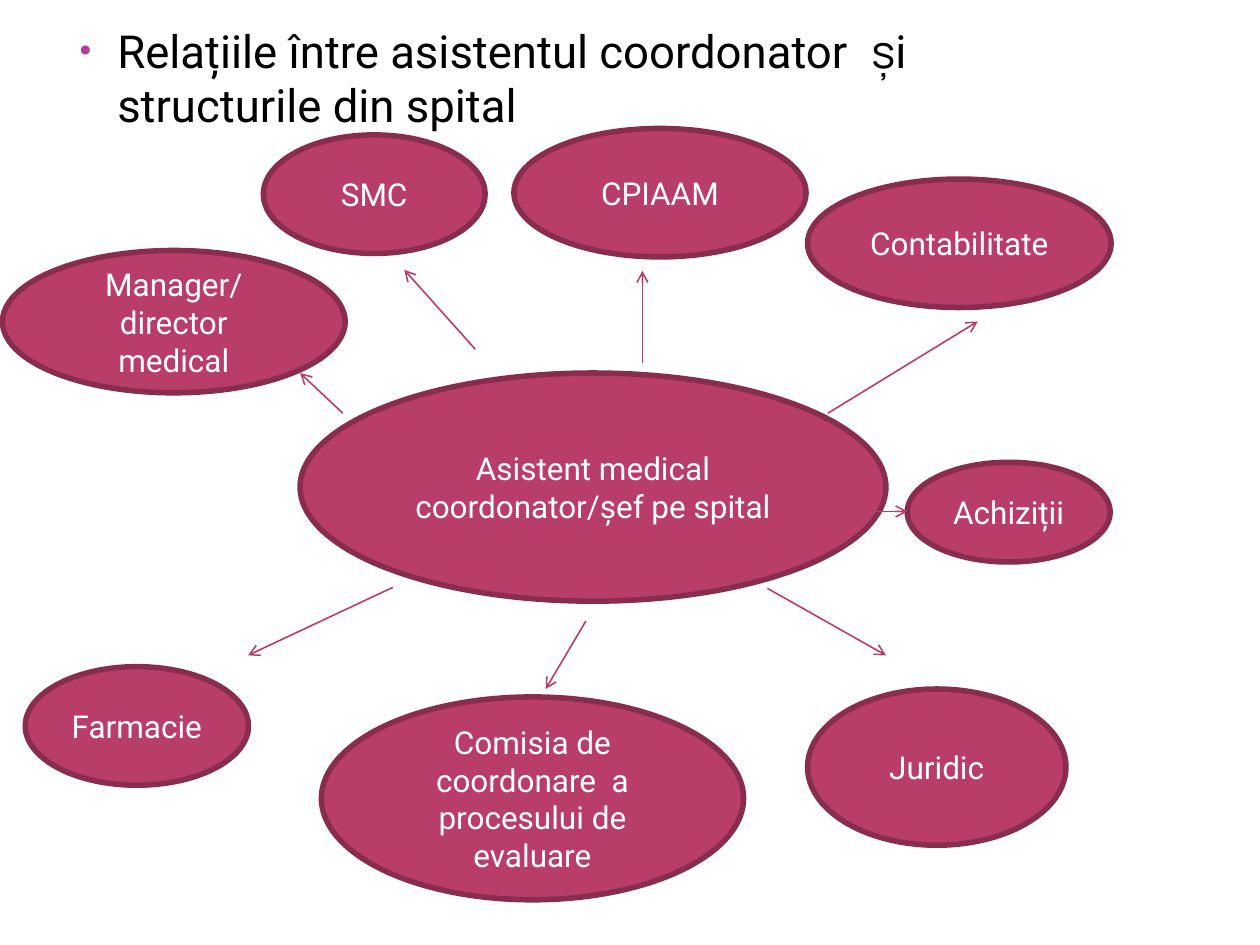
from dataclasses import dataclass

from lxml.etree import SubElement
from pptx import Presentation
from pptx.dml.color import RGBColor
from pptx.enum.shapes import MSO_CONNECTOR, MSO_SHAPE
from pptx.enum.text import MSO_ANCHOR, MSO_AUTO_SIZE, PP_ALIGN
from pptx.oxml.ns import qn
from pptx.util import Cm, Pt


@dataclass(frozen=True)
class Theme:
    fill: str = "B83D68"
    outline: str = "882D4D"
    bullet: str = "B13F9A"
    heading: str = "000000"
    label: str = "FFFFFF"
    font: str = "Roboto"
    accent_font: str = "Manrope"
    heading_size: float = 26
    label_size: float = 18
    outline_width: float = 3.15
    arrow_width: float = 0.9


class SlideBuilder:
    """Holds the theme and the current slide."""

    def __init__(self, slide, theme):
        self.slide = slide
        self.theme = theme

    def add_run(self, paragraph, text, size, color, font):
        run = paragraph.add_run()
        run.text = text
        run.font.size = Pt(size)
        run.font.name = font
        run.font.color.rgb = RGBColor.from_string(color)

    def fill_body(self, left, top, width, height, runs):
        """Place the body placeholder and write one bulleted paragraph."""
        theme = self.theme
        body = self.slide.placeholders[1]
        body.left, body.top = Cm(left), Cm(top)
        body.width, body.height = Cm(width), Cm(height)
        frame = body.text_frame
        frame.word_wrap = True
        frame.auto_size = MSO_AUTO_SIZE.NONE
        frame.vertical_anchor = MSO_ANCHOR.TOP
        frame.margin_right = Cm(0.6)

        paragraph = frame.paragraphs[0]
        properties = paragraph._p.get_or_add_pPr()
        properties.set("marL", str(Cm(0.76)))
        properties.set("indent", str(Cm(-0.76)))
        color = SubElement(properties, qn("a:buClr"))
        SubElement(color, qn("a:srgbClr"), val=theme.bullet)
        SubElement(properties, qn("a:buSzPct"), val="73000")
        SubElement(properties, qn("a:buFont"), typeface="Arial")
        SubElement(properties, qn("a:buChar"), char="•")
        paragraph.space_before = Pt(0)
        for text, font in runs:
            self.add_run(paragraph, text, theme.heading_size, theme.heading, font)

    def add_ellipse(self, left, top, width, height, *lines):
        theme = self.theme
        shape = self.slide.shapes.add_shape(
            MSO_SHAPE.OVAL, Cm(left), Cm(top), Cm(width), Cm(height))
        shape.shadow.inherit = False
        shape.fill.solid()
        shape.fill.fore_color.rgb = RGBColor.from_string(theme.fill)
        shape.line.color.rgb = RGBColor.from_string(theme.outline)
        shape.line.width = Pt(theme.outline_width)
        frame = shape.text_frame
        frame.word_wrap = True
        frame.vertical_anchor = MSO_ANCHOR.MIDDLE
        for index, text in enumerate(lines):
            paragraph = frame.add_paragraph() if index else frame.paragraphs[0]
            paragraph.alignment = PP_ALIGN.CENTER
            self.add_run(paragraph, text, theme.label_size, theme.label, theme.font)

    def add_arrow(self, start_x, start_y, end_x, end_y):
        connector = self.slide.shapes.add_connector(
            MSO_CONNECTOR.STRAIGHT, Cm(start_x), Cm(start_y), Cm(end_x), Cm(end_y))
        connector.line.color.rgb = RGBColor.from_string(self.theme.fill)
        connector.line.width = Pt(self.theme.arrow_width)
        SubElement(connector.line._get_or_add_ln(), qn("a:tailEnd"), type="arrow")
        SubElement(connector._element.spPr, qn("a:effectLst"))


def main():
    presentation = Presentation()
    presentation.slide_width, presentation.slide_height = Cm(25.4), Cm(19.05)
    slide = presentation.slides.add_slide(presentation.slide_layouts[1])
    title = slide.shapes.title._element
    title.getparent().remove(title)
    theme = Theme()
    builder = SlideBuilder(slide, theme)

    # Heading
    builder.fill_body(1.35, 0.33, 21.74, 18.21, [
        ("Relațiile între asistentul coordonator  ", theme.font),
        ("ș", theme.accent_font),
        ("i  structurile din spital", theme.font),
    ])

    # Coordinating nurse in the middle, hospital structures around
    ellipses = [
        (6.05, 7.52, 11.81, 4.6, "Asistent medical coordonator/șef pe spital"),
        (0.05, 5.05, 6.91, 2.87, "Manager/", "director medical"),
        (5.31, 2.72, 4.47, 2.39, "SMC"),
        (10.36, 2.59, 5.89, 2.59, "CPIAAM"),
        (16.28, 3.61, 6.12, 2.59, "Contabilitate"),
        (18.29, 9.32, 4.09, 2.01, "Achiziții"),
        (16.28, 13.89, 5.21, 3.15, "Juridic"),
        (6.48, 14.05, 8.51, 4.09, "Comisia de coordonare  a procesului de evaluare"),
        (0.51, 13.44, 4.5, 2.39, "Farmacie"),
    ]
    for ellipse in ellipses:
        builder.add_ellipse(*ellipse)

    # Arrows from the middle outwards, clockwise from the manager
    arrows = [
        (6.91, 8.33, 6.05, 7.52),
        (9.58, 7.04, 8.15, 5.44),
        (12.95, 7.32, 12.95, 5.46),
        (16.69, 8.33, 19.71, 6.48),
        (17.09, 10.31, 18.29, 10.31),
        (15.47, 11.86, 17.86, 13.21),
        (11.81, 12.52, 11, 13.89),
        (7.92, 11.84, 5, 13.21),
    ]
    for arrow in arrows:
        builder.add_arrow(*arrow)

    presentation.save("out.pptx")


if __name__ == "__main__":
    main()
